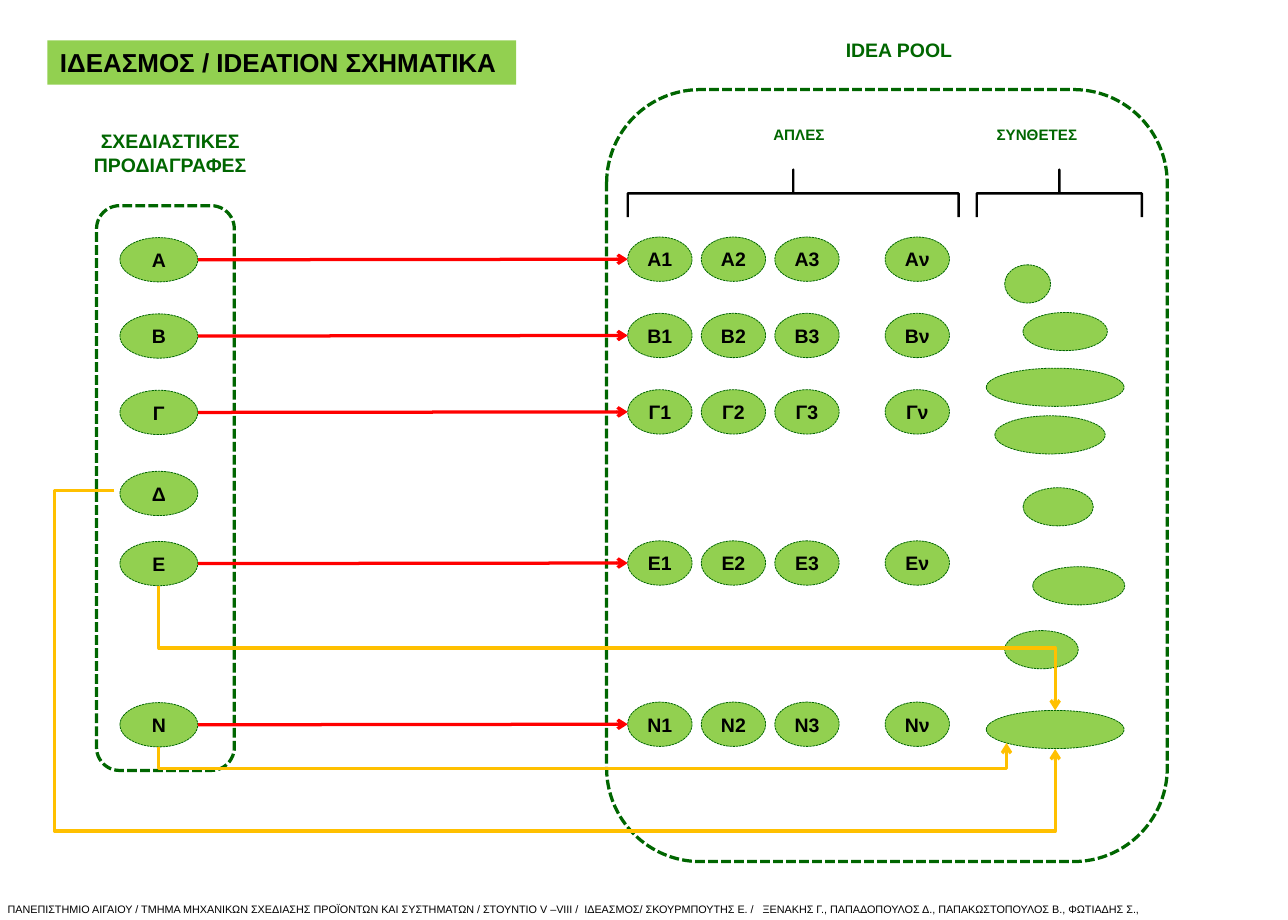
from lxml import etree
from pptx import Presentation
from pptx import util as u
from pptx.dml import color
from pptx.enum import dml, shapes, text
from pptx.oxml import ns

GREEN, DARK_GREEN, BLACK = "92D050", "006600", "000000"
RED, AMBER = "FF0000", "FFC000"
ROW_CENTRES = {"A": 240.1, "Β": 310.6, "Γ": 381.2, "Δ": 456.1, "Ε": 520.9, "Ν": 669.9}
SIMPLE_COLUMNS = {"1": 19.5, "2": 87.5, "3": 155.5, "ν": 257.5}
COMPOSITES = [(368, 500, 68), (385, 206, 78), (394, 441, 85), (385, 368, 65),
              (368, 162, 42.5), (359, 301.5, 102), (351, 257.5, 127.5)]
TARGET = (351, 573.8, 127.5)
NODE_HEIGHT, COMPOSITE_HEIGHT = 41, 35.3


def rgb(value):
    return color.RGBColor.from_string(value)


def assign(target, values):
    for name, value in values.items():
        setattr(target, name, value)


def points(*lengths):
    return [u.Pt(length) for length in lengths]


def write(shape, lines, size, ink=BLACK, bold=True, align=text.PP_ALIGN.CENTER,
          anchor=text.MSO_ANCHOR.TOP, wrap=True, insets=(7.2, 3.6)):
    frame = shape.text_frame
    side, edge = points(*insets)
    assign(frame, {"word_wrap": wrap, "vertical_anchor": anchor,
                   "margin_left": side, "margin_right": side,
                   "margin_top": edge, "margin_bottom": edge})
    for number, line in enumerate(lines):
        para = frame.add_paragraph() if number else frame.paragraphs[0]
        para.alignment = align
        span = para.add_run()
        span.text = line
        assign(span.font, {"name": "Arial", "size": u.Pt(size), "bold": bold})
        span.font.color.rgb = rgb(ink)


def label(page, box, lines, size, **style):
    write(page.shapes.add_textbox(*points(*box)), lines, size, **style)


def stroke(shape, ink, width, dash=None):
    shape.line.color.rgb = rgb(ink)
    assign(shape.line, {"width": u.Pt(width), "dash_style": dash})


def preset(page, kind, box, fill=None):
    shape = page.shapes.add_shape(kind, *points(*box))
    shape.shadow.inherit = False
    if fill:
        shape.fill.solid()
        shape.fill.fore_color.rgb = rgb(fill)
    else:
        shape.fill.background()
    return shape


def oval(page, box, caption=None):
    shape = preset(page, shapes.MSO_SHAPE.OVAL, box, GREEN)
    stroke(shape, DARK_GREEN, 0.75, dml.MSO_LINE.SQUARE_DOT)
    if caption:
        write(shape, [caption], 18, anchor=text.MSO_ANCHOR.MIDDLE, wrap=False, insets=(0, 0))


def enclosure(page, box):
    shape = preset(page, shapes.MSO_SHAPE.ROUNDED_RECTANGLE, box)
    shape.adjustments[0] = 0.167
    stroke(shape, DARK_GREEN, 3, dml.MSO_LINE.SQUARE_DOT)


def bracket(page, left, top, width, height):
    shift = (width - height) / 2
    shape = preset(page, shapes.MSO_SHAPE.LEFT_BRACE, (left + shift, top - shift, height, width))
    shape.rotation = 90
    shape.adjustments[0] = 0
    stroke(shape, BLACK, 2.25)


def add_arrowhead(shape):
    etree.SubElement(shape.line._get_or_add_ln(), ns.qn("a:tailEnd"), type="arrow")


def straight_arrow(page, start, end):
    arrow = page.shapes.add_connector(shapes.MSO_CONNECTOR.STRAIGHT, *points(*start, *end))
    stroke(arrow, RED, 3)
    add_arrowhead(arrow)
    etree.SubElement(arrow._element.spPr, ns.qn("a:effectLst"))


def bent_arrow(page, start, *stops):
    builder = page.shapes.build_freeform(*points(*start))
    builder.add_line_segments([points(*stop) for stop in stops], close=False)
    arrow = builder.convert_to_shape()
    arrow.shadow.inherit = False
    arrow.fill.background()
    stroke(arrow, AMBER, 3)
    add_arrowhead(arrow)


def specifications(page, box):
    left, top, _, _ = box
    for name, centre in ROW_CENTRES.items():
        oval(page, (left + 21.6, centre - NODE_HEIGHT / 2, 72, NODE_HEIGHT), name)
    enclosure(page, box)
    label(page, (left - 51.1, top - 74.2, 238.3, 67),
          ["ΣΧΕΔΙΑΣΤΙΚΕΣ", "ΠΡΟΔΙΑΓΡΑΦΕΣ"], 18, ink=DARK_GREEN)


def idea_pool(page, box):
    left, top, _, _ = box
    for name, centre in ROW_CENTRES.items():
        if name == "Δ":
            continue
        for suffix, offset in SIMPLE_COLUMNS.items():
            oval(page, (left + offset, centre - NODE_HEIGHT / 2 - 0.5, 59.5, NODE_HEIGHT),
                 name + suffix)
    enclosure(page, box)
    label(page, (left + 121.6, top - 51, 297.4, 38), ["IDEA POOL"], 18, ink=DARK_GREEN)
    for x, y, width in [*COMPOSITES, TARGET]:
        oval(page, (left + x, top + y, width, COMPOSITE_HEIGHT))
    for caption, text_x, x, width in [("ΑΠΛΕΣ", 147, 19.5, 306), ("ΣΥΝΘΕΤΕΣ", 353.5, 342.2, 152.6)]:
        label(page, (left + text_x, top + 29.5, 150, 24.5), [caption], 14,
              ink=DARK_GREEN, align=text.PP_ALIGN.LEFT)
        bracket(page, left + x, top + 74, width, 43.9)


def flows(page, spec_box, pool_box):
    node_x = spec_box[0] + 57.6
    for name, centre in ROW_CENTRES.items():
        if name != "Δ":
            straight_arrow(page, (node_x + 36, centre),
                           (pool_box[0] + SIMPLE_COLUMNS["1"], centre - 0.5))
    x, y, width = TARGET
    target_x, target_top = pool_box[0] + x + width / 2, pool_box[1] + y
    target_bottom = target_top + COMPOSITE_HEIGHT
    corner_x = target_x - 45
    half = NODE_HEIGHT / 2
    bent_arrow(page, (node_x, ROW_CENTRES["Ε"] + half), (node_x, 599),
               (target_x, 599), (target_x, target_top))
    bent_arrow(page, (node_x, ROW_CENTRES["Ν"] + half), (node_x, 710.6),
               (corner_x, 710.6), (corner_x, target_bottom - 5.2))
    bent_arrow(page, (105.8, 453.6), (50.4, 453.6), (50.4, 768.2),
               (target_x, 768.2), (target_x, target_bottom + 0.5))


def title(page, box):
    shape = preset(page, shapes.MSO_SHAPE.RECTANGLE, box, GREEN)
    shape.line.fill.background()
    write(shape, ["ΙΔΕΑΣΜΟΣ / IDEATION ΣΧΗΜΑΤΙΚΑ"], 24, align=text.PP_ALIGN.LEFT,
          anchor=text.MSO_ANCHOR.MIDDLE, insets=(11.5, 5.8))


def footer(page, box):
    label(page, box, [
        "ΠΑΝΕΠΙΣΤΗΜΙΟ ΑΙΓΑΙΟΥ / ΤΜΗΜΑ ΜΗΧΑΝΙΚΩΝ ΣΧΕΔΙΑΣΗΣ ΠΡΟΪΟΝΤΩΝ ΚΑΙ ΣΥΣΤΗΜΑΤΩΝ / "
        "ΣΤΟΥΝΤΙΟ V –VIII /  ΙΔΕΑΣΜΟΣ/ ΣΚΟΥΡΜΠΟΥΤΗΣ Ε. /   ΞΕΝΑΚΗΣ Γ., ΠΑΠΑΔΟΠΟΥΛΟΣ Δ., "
        "ΠΑΠΑΚΩΣΤΟΠΟΥΛΟΣ Β., ΦΩΤΙΑΔΗΣ Σ.,"], 10, bold=False, align=text.PP_ALIGN.LEFT)


def main():
    deck = Presentation()
    assign(deck, {"slide_width": u.Pt(1190.88), "slide_height": u.Pt(850.32)})
    page = deck.slides.add_slide(deck.slide_layouts[6])
    spec_box = (89.3, 190.1, 127.4, 522)
    pool_box = (560.9, 82.8, 518.4, 713.5)
    footer(page, (0, 830.9, 1085, 19.4))
    specifications(page, spec_box)
    idea_pool(page, pool_box)
    flows(page, spec_box, pool_box)
    title(page, (43.9, 37.4, 433.4, 41))
    deck.save("out.pptx")


if __name__ == "__main__":
    main()
